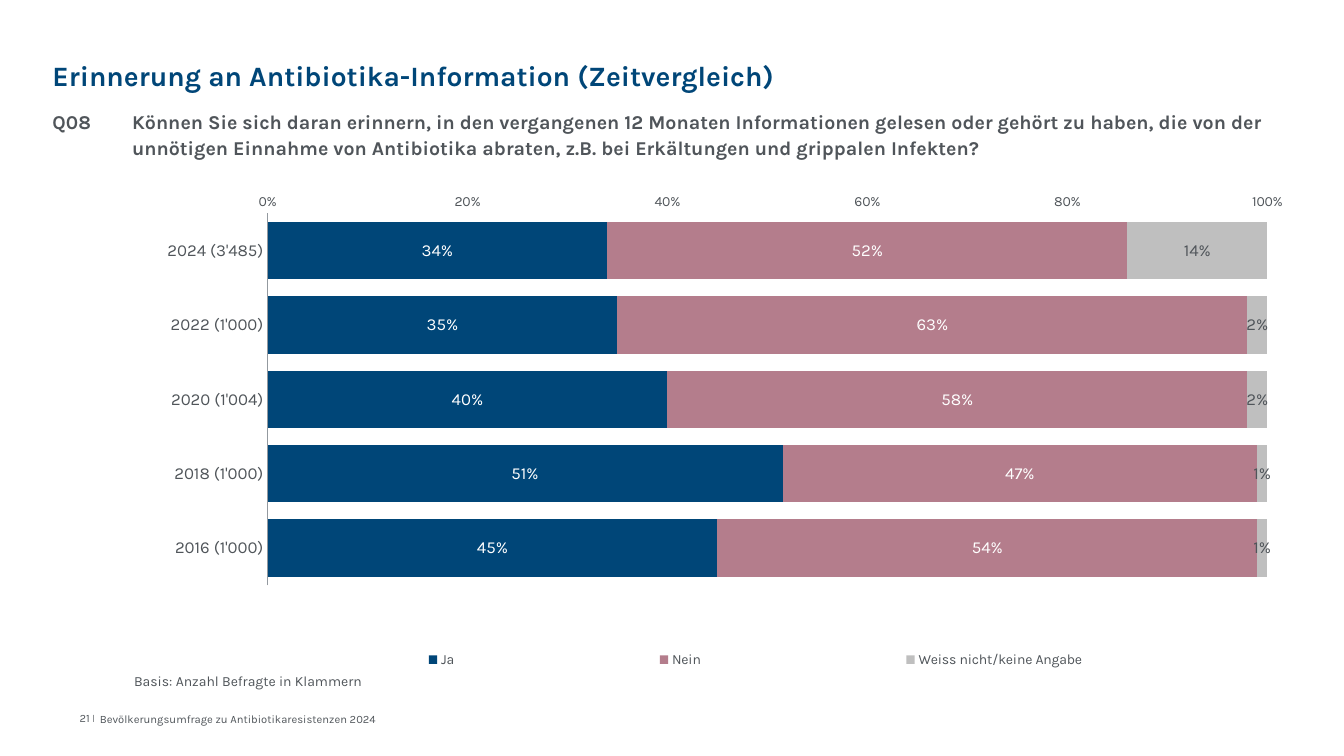
from dataclasses import dataclass

from lxml import etree
from pptx import Presentation
from pptx.chart.chart import Chart
from pptx.chart.data import CategoryChartData
from pptx.dml.color import RGBColor
from pptx.enum.chart import (XL_AXIS_CROSSES, XL_CHART_TYPE, XL_LABEL_POSITION,
                             XL_LEGEND_POSITION, XL_TICK_MARK)
from pptx.enum.text import MSO_ANCHOR, PP_ALIGN
from pptx.oxml.ns import qn
from pptx.slide import Slide
from pptx.text.text import Font
from pptx.util import Inches, Pt

BLUE = RGBColor(0x00, 0x46, 0x78)
ROSE = RGBColor(0xB4, 0x7D, 0x8C)
SILVER = RGBColor(0xBF, 0xBF, 0xBF)
TEXT_GREY = RGBColor(0x50, 0x55, 0x5A)
AXIS_GREY = RGBColor(0x93, 0x99, 0x9F)
WHITE = RGBColor(0xFF, 0xFF, 0xFF)

STACKED_100 = XL_CHART_TYPE.BAR_STACKED_100
CROSS_MAXIMUM = XL_AXIS_CROSSES.MAXIMUM
CENTER_LABEL = XL_LABEL_POSITION.CENTER
LEGEND_BOTTOM = XL_LEGEND_POSITION.BOTTOM
NO_TICKS = XL_TICK_MARK.NONE
TOP, BOTTOM = MSO_ANCHOR.TOP, MSO_ANCHOR.BOTTOM
LEFT, RIGHT = PP_ALIGN.LEFT, PP_ALIGN.RIGHT

TYPEFACE = "Karla"
PERCENT = "0%"


@dataclass(frozen=True)
class Piece:
    text: str
    size: float
    color: RGBColor = TEXT_GREY
    bold: bool = False
    baseline: int = 0


@dataclass(frozen=True)
class TextBlock:
    left: float
    top: float
    width: float
    height: float
    pieces: tuple[Piece, ...]
    anchor: MSO_ANCHOR = TOP
    align: PP_ALIGN = LEFT
    line_spacing: float = 1.0
    hanging: float = 0.0


@dataclass(frozen=True)
class Answer:
    name: str
    shares: tuple[float, ...]
    color: RGBColor
    label_color: RGBColor


@dataclass(frozen=True)
class Area:
    x: float
    y: float
    w: float
    h: float


TEXT_BLOCKS = (
    TextBlock(0.52, 0.29, 8.27, 0.63,
              (Piece("Erinnerung an Antibiotika-Information (Zeitvergleich)", 20, BLUE, True),),
              anchor=BOTTOM, line_spacing=0.9),
    TextBlock(0.52, 1.07, 12.13, 0.47,
              (Piece("Q08\tKönnen Sie sich daran erinnern, in den vergangenen 12 Monaten "
                     "Informationen gelesen oder gehört zu haben, die von der unnötigen "
                     "Einnahme von Antibiotika abraten, z.B. bei Erkältungen und grippalen "
                     "Infekten?", 14, bold=True),),
              line_spacing=1.1, hanging=0.79),
    TextBlock(1.33, 6.66, 7.44, 0.16,
              (Piece("Basis: Anzahl Befragte in Klammern", 10),), line_spacing=1.1),
    TextBlock(0.52, 7.04, 0.42, 0.16,
              (Piece("21 ", 8), Piece("|", 10, baseline=10)), anchor=BOTTOM, align=RIGHT),
    TextBlock(0.99, 7.04, 7.81, 0.16,
              (Piece("Bevölkerungsumfrage zu Antibiotikaresistenzen 2024", 8),), anchor=BOTTOM),
)

SURVEYS = ("2024 (3'485)", "2022 (1'000)", "2020 (1'004)", "2018 (1'000)", "2016 (1'000)")
ANSWERS = (
    Answer("Ja", (0.34, 0.35, 0.40, 0.51, 0.45), BLUE, WHITE),
    Answer("Nein", (0.52, 0.63, 0.58, 0.47, 0.54), ROSE, WHITE),
    Answer("Weiss nicht/keine Angabe", (0.14, 0.02, 0.02, 0.01, 0.01), SILVER, TEXT_GREY),
)
PLOT_AREA = Area(0.113, 0.067, 0.834, 0.711)
LEGEND_AREA = Area(0.08, 0.89, 0.88, 0.06)


def style_font(font: Font, size: float, color: RGBColor, bold: bool = False) -> None:
    font.name = TYPEFACE
    font.size = Pt(size)
    font.bold = bold
    font.color.rgb = color


def draw_text(slide: Slide, block: TextBlock) -> None:
    frame = slide.shapes.add_textbox(Inches(block.left), Inches(block.top),
                                     Inches(block.width), Inches(block.height)).text_frame
    frame.margin_left = frame.margin_right = frame.margin_top = frame.margin_bottom = 0
    frame.word_wrap = True
    frame.vertical_anchor = block.anchor
    paragraph = frame.paragraphs[0]
    paragraph.alignment = block.align
    paragraph.line_spacing = block.line_spacing
    if block.hanging:
        properties = paragraph._p.get_or_add_pPr()
        properties.set("marL", str(Inches(block.hanging)))
        properties.set("indent", str(-Inches(block.hanging)))
    for piece in block.pieces:
        run = paragraph.add_run()
        run.text = piece.text
        style_font(run.font, piece.size, piece.color, piece.bold)
        if piece.baseline:
            run.font._element.set("baseline", str(piece.baseline * 1000))


def set_layout(parent: etree._Element, area: Area, before: str, inner: bool = False) -> None:
    for stale in parent.findall(qn("c:layout")):
        parent.remove(stale)
    layout = etree.Element(qn("c:layout"))
    manual = etree.SubElement(layout, qn("c:manualLayout"))
    settings = {"layoutTarget": "inner"} if inner else {}
    settings |= {"xMode": "edge", "yMode": "edge", "x": area.x, "y": area.y,
                 "w": area.w, "h": area.h}
    for tag, value in settings.items():
        etree.SubElement(manual, qn(f"c:{tag}")).set("val", str(value))
    parent.find(qn(before)).addprevious(layout)


def style_axes(chart: Chart) -> None:
    surveys, shares = chart.category_axis, chart.value_axis
    for axis, size in ((surveys, 12), (shares, 10)):
        axis.major_tick_mark = axis.minor_tick_mark = NO_TICKS
        axis.has_major_gridlines = False
        style_font(axis.tick_labels.font, size, TEXT_GREY)
    surveys.reverse_order = True
    surveys.crosses = CROSS_MAXIMUM
    surveys.format.line.color.rgb = AXIS_GREY
    surveys.format.line.width = Pt(0.75)
    shares.minimum_scale, shares.maximum_scale, shares.major_unit = 0, 1, 0.2
    shares.tick_labels.number_format = PERCENT
    shares.tick_labels.number_format_is_linked = False
    shares.format.line.fill.background()


def draw_chart(slide: Slide) -> None:
    data = CategoryChartData(number_format=PERCENT)
    data.categories = SURVEYS
    for answer in ANSWERS:
        data.add_series(answer.name, answer.shares)
    chart = slide.shapes.add_chart(STACKED_100, Inches(1.31), Inches(1.77),
                                   Inches(11.89), Inches(5.19), data).chart
    style_font(chart.font, 10, TEXT_GREY)
    chart.has_title = False
    style_axes(chart)
    plot = chart.plots[0]
    plot.gap_width, plot.overlap, plot.vary_by_categories = 30, 100, False
    for series, answer in zip(plot.series, ANSWERS):
        series.format.fill.solid()
        series.format.fill.fore_color.rgb = answer.color
        labels = series.data_labels
        labels.show_value = True
        labels.number_format = PERCENT
        labels.number_format_is_linked = False
        labels.position = CENTER_LABEL
        style_font(labels.font, 12, answer.label_color)
    chart.has_legend = True
    chart.legend.position = LEGEND_BOTTOM
    chart.legend.include_in_layout = False
    style_font(chart.legend.font, 10, TEXT_GREY)
    set_layout(chart._chartSpace.chart.plotArea, PLOT_AREA, "c:barChart", inner=True)
    set_layout(chart.legend._element, LEGEND_AREA, "c:overlay")


def main() -> None:
    presentation = Presentation()
    presentation.slide_width = Inches(13.33)
    presentation.slide_height = Inches(7.5)
    slide = presentation.slides.add_slide(presentation.slide_layouts[6])
    draw_chart(slide)
    for block in TEXT_BLOCKS:
        draw_text(slide, block)
    presentation.save("out.pptx")


if __name__ == "__main__":
    main()
